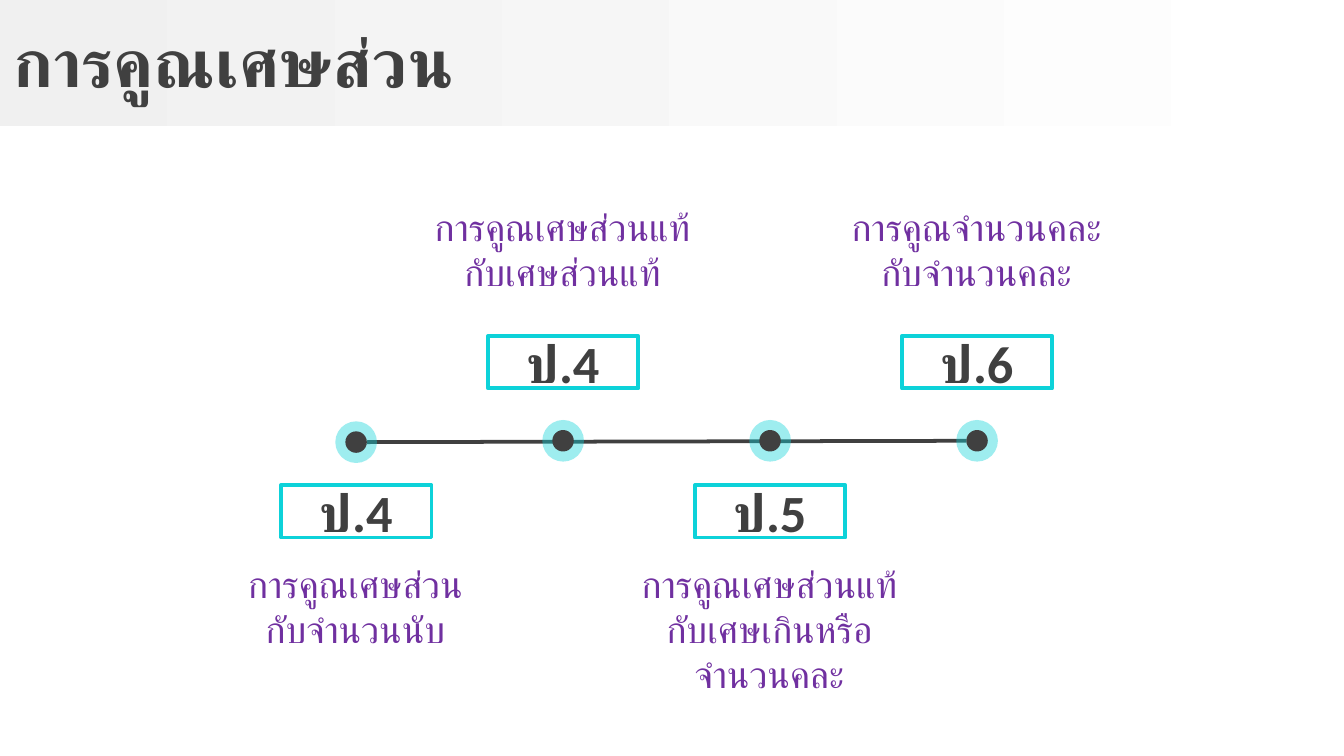
from lxml import etree
from pptx import Presentation
from pptx.dml.color import RGBColor
from pptx.enum.shapes import MSO_CONNECTOR, MSO_SHAPE
from pptx.enum.text import MSO_ANCHOR, PP_ALIGN
from pptx.oxml.ns import qn
from pptx.util import Inches, Pt

DARK = RGBColor(0x40, 0x40, 0x40)
CYAN = RGBColor(0x0D, 0xD2, 0xD9)
PURPLE = RGBColor(0x70, 0x30, 0xA0)
LIGHT_GRAY = RGBColor(0xF0, 0xF0, 0xF0)
WHITE = RGBColor(0xFF, 0xFF, 0xFF)


def write_text(shape, text, size, color, bold=False, align=PP_ALIGN.CENTER, anchor=MSO_ANCHOR.MIDDLE):
    frame = shape.text_frame
    frame.word_wrap = True
    frame.vertical_anchor = anchor
    frame.text = text
    for paragraph in frame.paragraphs:
        paragraph.alignment = align
        for run in paragraph.runs:
            run.font.name = "Calibri"
            run.font.size = Pt(size)
            run.font.bold = bold
            run.font.color.rgb = color


def add_dot(shapes, center_x, center_y, diameter, color):
    dot = shapes.add_shape(
        MSO_SHAPE.OVAL, Inches(center_x - diameter / 2), Inches(center_y - diameter / 2),
        Inches(diameter), Inches(diameter))
    dot.shadow.inherit = False
    dot.fill.solid()
    dot.fill.fore_color.rgb = color
    dot.line.fill.background()
    return dot


presentation = Presentation()
presentation.slide_width = Inches(10)
presentation.slide_height = Inches(10 * 9 / 16)
slide = presentation.slides.add_slide(presentation.slide_layouts[5])

title = slide.shapes.title
title.left, title.top = Inches(0), Inches(0.03)
title.width, title.height = Inches(10), Inches(0.85)
write_text(title, "การคูณเศษส่วน", 36, DARK, bold=True, align=PP_ALIGN.LEFT)

band = slide.shapes.add_shape(MSO_SHAPE.RECTANGLE, Inches(0), Inches(0), Inches(9.96), Inches(0.94))
band.shadow.inherit = False
band.fill.gradient()
band.fill.gradient_angle = 0
for stop, color in zip(band.fill.gradient_stops, (LIGHT_GRAY, WHITE)):
    stop.color.rgb = color
band.line.fill.background()
title.element.addprevious(band.element)

timeline = slide.shapes.add_connector(
    MSO_CONNECTOR.STRAIGHT, Inches(2.73), Inches(3.29), Inches(7.19), Inches(3.28))
timeline.line.color.rgb = DARK
timeline.line.width = Pt(2)
etree.SubElement(timeline.element.spPr, qn("a:effectLst"))

steps = [
    ("ป.4", "การคูณเศษส่วน\nกับจำนวนนับ", 3.29),
    ("ป.4", "การคูณเศษส่วนแท้\vกับเศษส่วนแท้", 3.28),
    ("ป.5", "การคูณเศษส่วนแท้\nกับเศษเกินหรือจำนวนคละ", 3.28),
    ("ป.6", "การคูณจำนวนคละ\vกับจำนวนคละ", 3.28),
]

for index, (grade, topic, dot_y) in enumerate(steps):
    center_x = 2.65 + 1.54 * index
    grade_top, topic_top = (3.61, 4.13) if index % 2 == 0 else (2.5, 1.47)

    marker = slide.shapes.add_group_shape()
    halo = add_dot(marker.shapes, center_x, dot_y, 0.31, CYAN)
    halo_color = halo.element.spPr.find(qn("a:solidFill")).find(qn("a:srgbClr"))
    etree.SubElement(halo_color, qn("a:alpha"), val="40000")
    add_dot(marker.shapes, center_x, dot_y, 0.16, DARK)

    grade_box = slide.shapes.add_shape(
        MSO_SHAPE.RECTANGLE, Inches(center_x - 0.56), Inches(grade_top), Inches(1.12), Inches(0.39))
    grade_box.shadow.inherit = False
    grade_box.fill.background()
    grade_box.line.color.rgb = CYAN
    grade_box.line.width = Pt(2)
    write_text(grade_box, grade, 28, DARK, bold=True)

    topic_box = slide.shapes.add_textbox(
        Inches(center_x - 1.13), Inches(topic_top), Inches(2.25), Inches(0.77))
    write_text(topic_box, topic, 20, PURPLE, anchor=MSO_ANCHOR.TOP)

presentation.save("out.pptx")
